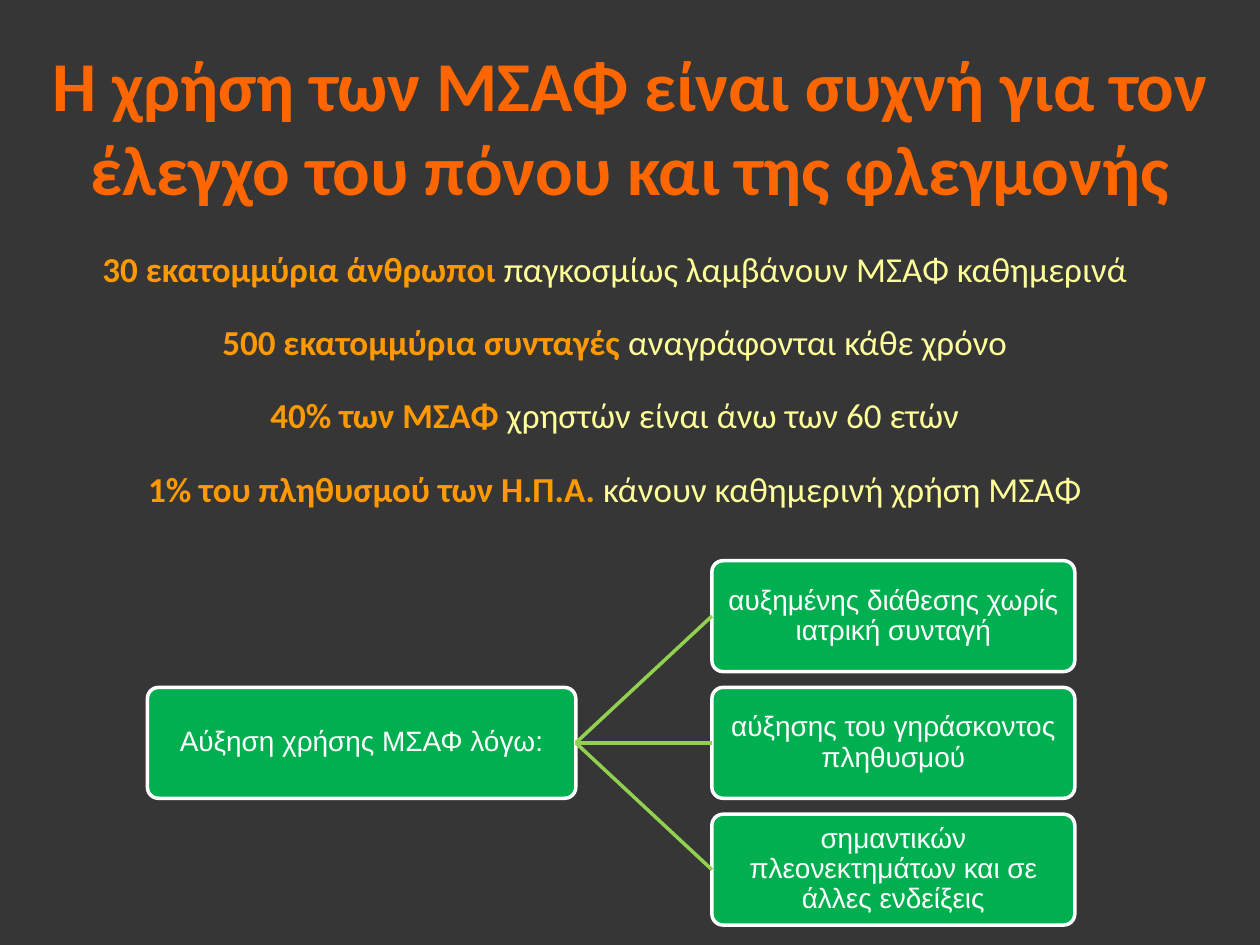
from dataclasses import dataclass

from lxml.etree import SubElement
from pptx import Presentation
from pptx.dml.color import RGBColor
from pptx.enum.shapes import MSO_CONNECTOR as Connector, MSO_SHAPE as Shape
from pptx.enum.text import MSO_ANCHOR as Anchor, PP_ALIGN as Align
from pptx.oxml.ns import qn
from pptx.util import Inches, Pt


@dataclass(frozen=True)
class Theme:
    background: str = "363636"
    title: str = "FF6600"
    highlight: str = "FF9900"
    body: str = "FFFF99"
    box: str = "00B050"
    outline: str = "FFFFFF"
    link: str = "92D050"
    text_font: str = "Calibri"
    box_font: str = "Arial"
    title_size: int = 40
    body_size: int = 20
    box_size: int = 16
    line_width: int = 2


class SlideBuilder:
    """Draws on one slide; places are (column, row, columns, rows) of a 100 by 75 grid."""

    COLUMNS, ROWS = 100, 75

    def __init__(self, deck, theme):
        self.theme = theme
        self.cell_width = deck.slide_width / self.COLUMNS
        self.cell_height = deck.slide_height / self.ROWS
        self.slide = deck.slides.add_slide(deck.slide_layouts[6])
        fill = self.slide.background.fill
        fill.solid()
        fill.fore_color.rgb = RGBColor.from_string(theme.background)

    def place(self, column, row, columns, rows):
        return (round(column * self.cell_width), round(row * self.cell_height),
                round(columns * self.cell_width), round(rows * self.cell_height))

    def style(self, span, font, size, color, bold=False):
        span.font.name = font
        span.font.size = Pt(size)
        span.font.bold = bold
        span.font.color.rgb = RGBColor.from_string(color)

    def text_box(self, area, anchor):
        frame = self.slide.shapes.add_textbox(*self.place(*area)).text_frame
        frame.word_wrap = True
        frame.vertical_anchor = anchor
        return frame

    def title(self, area, text):
        frame = self.text_box(area, Anchor.MIDDLE)
        frame.text = text
        para = frame.paragraphs[0]
        para.alignment = Align.CENTER
        self.style(para.runs[0], self.theme.text_font, self.theme.title_size,
                   self.theme.title, bold=True)

    def facts(self, area, facts):
        """Centred lines, each with a bold highlighted opening."""
        theme = self.theme
        frame = self.text_box(area, Anchor.TOP)
        for index, (lead, rest) in enumerate(facts):
            para = frame.add_paragraph() if index else frame.paragraphs[0]
            para.alignment = Align.CENTER
            para.line_spacing = 0.95
            if index:
                para.space_before = Pt(19)
            for text, color, bold in ((lead + " ", theme.highlight, True),
                                      (rest, theme.body, False)):
                span = para.add_run()
                span.text = text
                self.style(span, theme.text_font, theme.body_size, color, bold)

    def box(self, area, text):
        theme = self.theme
        box = self.slide.shapes.add_shape(Shape.ROUNDED_RECTANGLE, *self.place(*area))
        box.adjustments[0] = 0.1
        box.shadow.inherit = False
        box.fill.solid()
        box.fill.fore_color.rgb = RGBColor.from_string(theme.box)
        box.line.color.rgb = RGBColor.from_string(theme.outline)
        box.line.width = Pt(theme.line_width)
        frame = box.text_frame
        frame.word_wrap = True
        frame.vertical_anchor = Anchor.MIDDLE
        frame.margin_left = frame.margin_right = Inches(0.04)
        frame.margin_top = frame.margin_bottom = Inches(0.04)
        frame.text = text
        para = frame.paragraphs[0]
        para.alignment = Align.CENTER
        para.line_spacing = 0.9
        self.style(para.runs[0], theme.box_font, theme.box_size, theme.outline)
        return box

    def link(self, source, target):
        """Line from the right side of source to the left side of target."""
        line = self.slide.shapes.add_connector(Connector.STRAIGHT, 0, 0, 0, 0)
        line.begin_connect(source, 3)
        line.end_connect(target, 1)
        line.line.color.rgb = RGBColor.from_string(self.theme.link)
        line.line.width = Pt(self.theme.line_width)
        SubElement(line._element.spPr, qn("a:effectLst"))


FACTS = [
    ("30 εκατομμύρια άνθρωποι", "παγκοσμίως λαμβάνουν ΜΣΑΦ καθημερινά"),
    ("500 εκατομμύρια συνταγές", "αναγράφονται κάθε χρόνο"),
    ("40% των ΜΣΑΦ", "χρηστών είναι άνω των 60 ετών"),
    ("1% του πληθυσμού των Η.Π.Α.", "κάνουν καθημερινή χρήση ΜΣΑΦ"),
]
CAUSES = [
    "αυξημένης διάθεσης χωρίς ιατρική συνταγή",
    "αύξησης του γηράσκοντος πληθυσμού",
    "σημαντικών πλεονεκτημάτων και σε άλλες ενδείξεις",
]
BOX_ROWS = 8.8
FIRST_ROW, ROW_STEP = 44.5, 10.06


def main():
    deck = Presentation()
    deck.slide_width, deck.slide_height = Inches(10), Inches(7.5)
    builder = SlideBuilder(deck, Theme())
    builder.title((0, 2.1, 100, 15.7),
                  "Η χρήση των ΜΣΑΦ είναι συχνή για τον έλεγχο του πόνου και της φλεγμονής")
    builder.facts((6.2, 19.4, 85.2, 25.1), FACTS)
    root = builder.box((11.7, FIRST_ROW + ROW_STEP, 34, BOX_ROWS),
                       "Αύξηση χρήσης ΜΣΑΦ λόγω:")
    for index, cause in enumerate(CAUSES):
        row = FIRST_ROW + index * ROW_STEP
        builder.link(root, builder.box((56.5, row, 28.8, BOX_ROWS), cause))
    deck.save("out.pptx")


if __name__ == "__main__":
    main()
